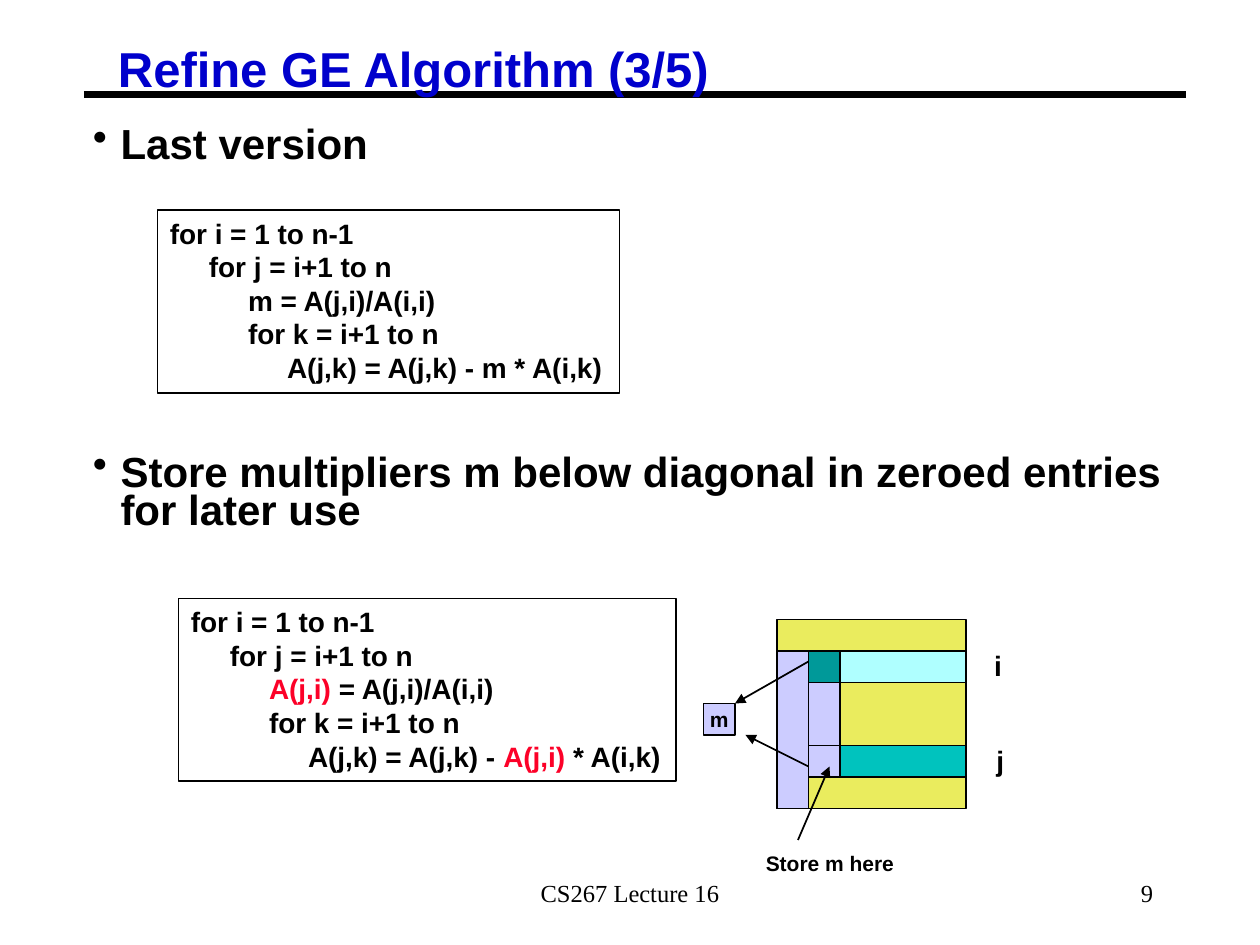
from dataclasses import dataclass

from lxml.etree import SubElement
from pptx import Presentation
from pptx.dml.color import RGBColor
from pptx.enum.shapes import MSO_CONNECTOR as Link, MSO_SHAPE as Shape
from pptx.enum.text import MSO_ANCHOR as Anchor, PP_ALIGN as Align
from pptx.oxml.ns import qn
from pptx.util import Inches, Pt

UNIT = Inches(1) / 12  # the slide is a grid of 120 columns by 90 rows


@dataclass(frozen=True)
class Theme:
    sans: str = "Arial"
    serif: str = "Times New Roman"
    ink: str = "000000"
    title: str = "0000CC"
    accent: str = "FC0128"
    untouched: str = "EAEC5E"
    multiplier: str = "CCCCFF"
    pivot: str = "009999"
    pivot_row: str = "AFFFFF"
    current_row: str = "00C3BE"
    title_size: int = 28
    body_size: int = 24
    code_size: int = 16
    note_size: int = 12
    footer_size: int = 14


THEME = Theme()


def grid(*units):
    return [round(u * UNIT) for u in units]


def style(paragraph, size, color=THEME.ink, face=THEME.sans, bold=True):
    font = paragraph.font
    font.name, font.size, font.bold = face, Pt(size), bold
    font.color.rgb = RGBColor.from_string(color)


def add_text(slide, box, text, size, align=Align.LEFT, anchor=Anchor.TOP,
             wrap=False, **look):
    frame = slide.shapes.add_textbox(*grid(*box)).text_frame
    frame.word_wrap, frame.vertical_anchor = wrap, anchor
    paragraph = frame.paragraphs[0]
    paragraph.text, paragraph.alignment = text, align
    style(paragraph, size, **look)
    return frame


def tighten(frame):
    frame.margin_left = frame.margin_right = Inches(0.07)
    frame.margin_top = frame.margin_bottom = Inches(0.03)


def add_rect(slide, box, fill=None):
    rect = slide.shapes.add_shape(Shape.RECTANGLE, *grid(*box))
    rect.shadow.inherit = False
    if fill:
        rect.fill.solid()
        rect.fill.fore_color.rgb = RGBColor.from_string(fill)
    else:
        rect.fill.background()
    rect.line.color.rgb = RGBColor.from_string(THEME.ink)
    rect.line.width = Pt(1)
    return rect


def add_line(slide, start, end, width=1, arrow=True):
    line = slide.shapes.add_connector(Link.STRAIGHT, *grid(*start, *end))
    line.line.color.rgb = RGBColor.from_string(THEME.ink)
    line.line.width = Pt(width)
    properties = line.element.spPr
    if arrow:
        SubElement(properties.find(qn("a:ln")), qn("a:tailEnd"), type="triangle")
    SubElement(properties, qn("a:effectLst"))


def set_indent(paragraph, left, first=0):
    properties = paragraph._p.get_or_add_pPr()
    properties.set("marL", str(Inches(left)))
    properties.set("indent", str(Inches(first)))
    return properties


def add_heading(slide, box, title):
    left, top, width, height = box
    add_line(slide, (left, top + height), (left + width, top + height), 3.75, False)
    frame = add_text(slide, (left + 2.4, top, 58.8, 5.6), title,
                     THEME.title_size, color=THEME.title)
    tighten(frame)
    frame.paragraphs[0].line_spacing = 0.87


def add_bullets(slide, box, points, gap):
    """Place bullets with a gap in points between them, leaving room for code."""
    frame = slide.shapes.add_textbox(*grid(*box)).text_frame
    frame.word_wrap = True
    tighten(frame)
    for number, point in enumerate(points):
        paragraph = frame.add_paragraph() if number else frame.paragraphs[0]
        paragraph.text = point
        paragraph.line_spacing = 0.75
        paragraph.space_before = Pt(gap if number else 0)
        style(paragraph, THEME.body_size)
        SubElement(set_indent(paragraph, 0.22, -0.22), qn("a:buChar"), char="•")
        # the bullet must precede the default run properties kept by the font
        properties = paragraph._p.pPr
        for default in properties.findall(qn("a:defRPr")):
            properties.append(default)


def add_code(slide, box, lines):
    """Place (depth, text) lines; text between bars is set in the accent colour."""
    frame = add_rect(slide, box).text_frame
    frame.word_wrap, frame.vertical_anchor = False, Anchor.TOP
    for number, (depth, text) in enumerate(lines):
        paragraph = frame.add_paragraph() if number else frame.paragraphs[0]
        paragraph.alignment = Align.LEFT
        set_indent(paragraph, 0.31 * depth)
        style(paragraph, THEME.code_size)
        for part, words in enumerate(text.split("|")):
            if words:
                run = paragraph.add_run()
                run.text = words
                if part % 2:
                    run.font.color.rgb = RGBColor.from_string(THEME.accent)


def add_matrix(slide, box):
    """Draw the matrix as six by six cells, with its row labels and pointers."""
    left, top, width, _ = box
    cell = width / 6

    def at(column, row):
        return left + column * cell, top + row * cell

    def block(column, row, columns, rows, fill):
        return add_rect(slide, (*at(column, row), columns * cell, rows * cell), fill)

    for region in (
        (0, 0, 6, 6, THEME.untouched),
        (0, 1, 1, 5, THEME.multiplier),
        (1, 2, 1, 2, THEME.multiplier),
        (1, 1, 1, 1, THEME.pivot),
        (2, 1, 4, 1, THEME.pivot_row),
        (2, 4, 4, 1, THEME.current_row),
        (1, 4, 1, 1, THEME.multiplier),
    ):
        block(*region)

    frame = block(-7 / 3, 8 / 3, 1, 1, THEME.multiplier).text_frame
    frame.word_wrap, frame.vertical_anchor = False, Anchor.MIDDLE
    frame.paragraphs[0].text = "m"
    frame.paragraphs[0].alignment = Align.CENTER
    style(frame.paragraphs[0], THEME.note_size)

    for start, end in (
        ((1, 4 / 3), (-4 / 3, 8 / 3)),
        ((1, 14 / 3), (-1, 11 / 3)),
        ((2 / 3, 7), (5 / 3, 14 / 3)),
    ):
        add_line(slide, at(*start), at(*end))

    add_text(slide, (*at(-0.75, 7.13), 14.8, 3.6), "Store m here", THEME.note_size)
    for label, column, row in (("i", 6.5, 0.73), ("j", 6.57, 3.73)):
        add_text(slide, (*at(column, row), 3.2, 4.4), label, THEME.code_size)


def add_footer(slide, box, course, page):
    left, top, width, height = box
    look = dict(face=THEME.serif, bold=False, anchor=Anchor.MIDDLE, wrap=True)
    add_text(slide, (left, top, 38, height), course, THEME.footer_size,
             Align.CENTER, **look)
    add_text(slide, (left + width - 25, top, 25, height), page,
             THEME.footer_size, Align.RIGHT, **look)


def gauss_code(multiplier, factor):
    return [
        (0, "for i = 1 to n-1"),
        (1, "for j = i+1 to n"),
        (2, f"{multiplier} = A(j,i)/A(i,i)"),
        (2, "for k = i+1 to n"),
        (3, f"A(j,k) = A(j,k) - {factor} * A(i,k)"),
    ]


def main():
    deck = Presentation()
    deck.slide_width, deck.slide_height = grid(120, 90)
    slide = deck.slides.add_slide(deck.slide_layouts[6])
    add_heading(slide, (8, 4.1, 105, 4.9), "Refine GE Algorithm (3/5)")
    add_bullets(slide, (8, 12, 105, 42), [
        "Last version",
        "Store multipliers m below diagonal in zeroed entries for later use",
    ], gap=165.6)
    add_code(slide, (15, 20, 44, 17.4), gauss_code("m", "m"))
    add_code(slide, (17, 57, 47.4, 17.4), gauss_code("|A(j,i)|", "|A(j,i)|"))
    add_matrix(slide, (74, 59, 18, 18))
    add_footer(slide, (41, 82, 70, 6), "CS267 Lecture 16", "9")
    deck.save("out.pptx")


if __name__ == "__main__":
    main()
